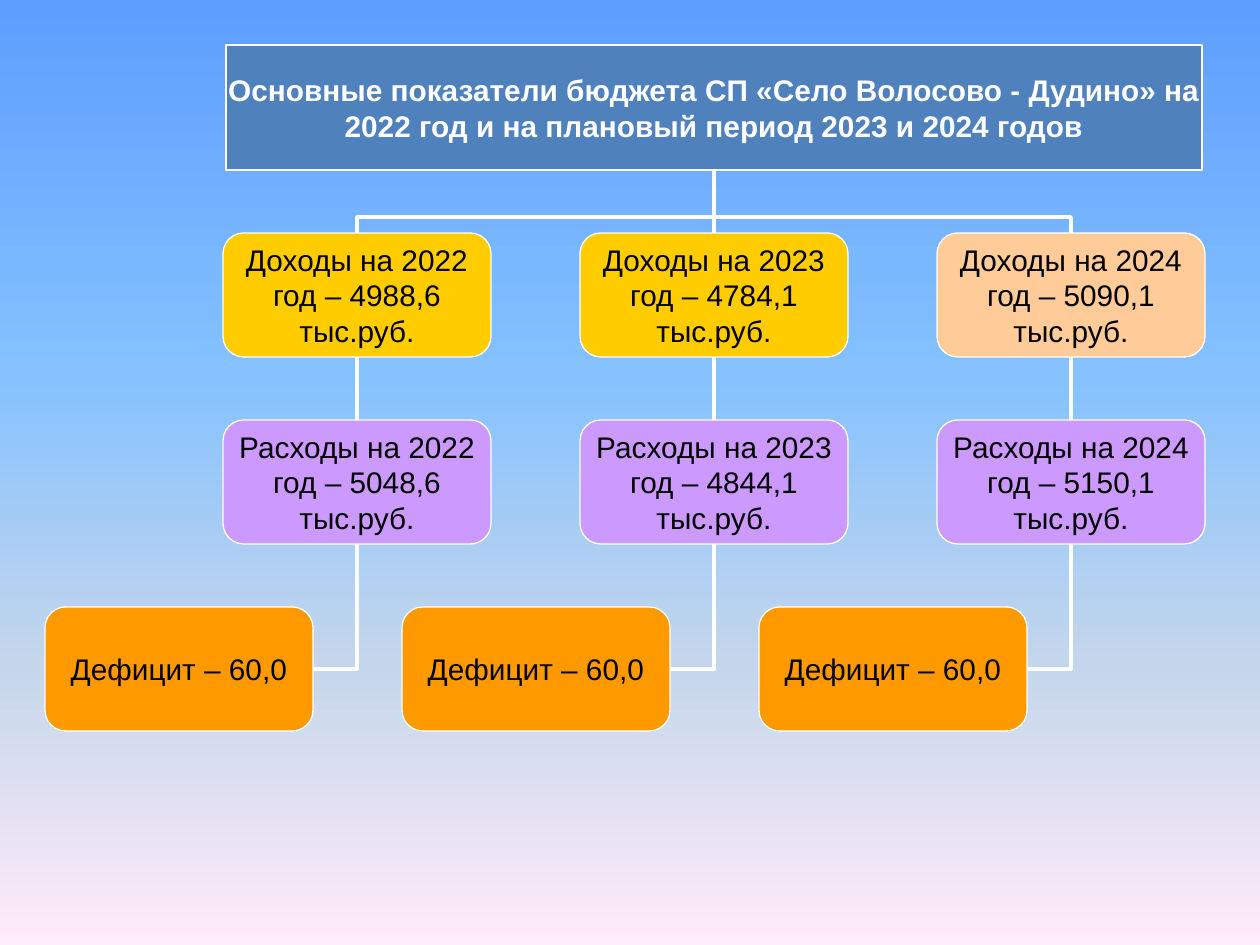
import dataclasses
import typing

import pptx
import pptx.dml.color
import pptx.enum.dml
import pptx.enum.shapes
import pptx.enum.text
import pptx.oxml
import pptx.oxml.ns
import pptx.util

WIDE, HIGH = 1260, 945
SCALE = 914400 / 126
FONT, SIZE = "Arial", 17
BOX_W, BOX_H = 268, 124
LEFT, TOP = 223, 233
STEP_X, STEP_Y = 357, 187
SHIFT = 178  # how far a deficit box sits left of its column
BEND = 25400  # share of the way to the trunk's turn, in 1/100000
ROUND = 0.167
TOP_SIDE, BOTTOM_SIDE, RIGHT_SIDE = 0, 2, 3

HUES = {
    "white": "FFFFFF", "black": "000000", "root": "4F81BD",
    "gold": "FFCC00", "peach": "FFCC99", "lilac": "CC99FF", "orange": "FF9900",
}
SKY = {0: "5E9EFF", 40: "85C2FF", 70: "C4D6EB", 100: "FFEBFA"}
TITLE = ("Основные показатели бюджета СП «Село Волосово - Дудино» "
         "на 2022 год и на плановый период 2023 и 2024 годов")


@dataclasses.dataclass(frozen=True)
class Year:
    name: int
    income: str
    spend: str
    gap: str
    hue: str


YEARS = [
    Year(2022, "4988,6", "5048,6", "60,0", "gold"),
    Year(2023, "4784,1", "4844,1", "60,0", "gold"),
    Year(2024, "5090,1", "5150,1", "60,0", "peach"),
]


def emu(px: float) -> pptx.util.Emu:
    return pptx.util.Emu(round(px * SCALE))


def rgb(hue: str) -> pptx.dml.color.RGBColor:
    return pptx.dml.color.RGBColor.from_string(HUES[hue])


def node(tag: str, **attrs: typing.Any) -> typing.Any:
    item = pptx.oxml.parse_xml(f"<{tag} {pptx.oxml.ns.nsdecls('a')}/>")
    for key, value in attrs.items():
        item.set(key, str(value))
    return item


def write(shape: typing.Any, text: str, *, hue: str = "black", bold: bool = False) -> None:
    frame = shape.text_frame
    frame.text = text
    frame.word_wrap = True
    frame.auto_size = pptx.enum.text.MSO_AUTO_SIZE.NONE
    frame.vertical_anchor = pptx.enum.text.MSO_ANCHOR.MIDDLE
    frame.margin_left = frame.margin_right = frame.margin_top = frame.margin_bottom = 0
    line = frame.paragraphs[0]
    line.alignment = pptx.enum.text.PP_ALIGN.CENTER
    font = line.runs[0].font
    font.name, font.size, font.bold = FONT, pptx.util.Pt(SIZE), bold
    font.color.rgb = rgb(hue)


def paint(shape: typing.Any, hue: str) -> None:
    shape.fill.solid()
    shape.fill.fore_color.rgb = rgb(hue)
    shape.line.color.rgb = rgb("white")
    shape.line.width = pptx.util.Pt(0.75)


def box(slide: typing.Any, col: int, row: int, text: str, hue: str, shift: int = 0) -> typing.Any:
    shape = slide.shapes.add_shape(
        pptx.enum.shapes.MSO_SHAPE.ROUNDED_RECTANGLE,
        emu(LEFT + col * STEP_X - shift), emu(TOP + row * STEP_Y), emu(BOX_W), emu(BOX_H))
    shape.adjustments[0] = ROUND
    shape.shadow.inherit = False
    paint(shape, hue)
    write(shape, text)
    return shape


def head(slide: typing.Any) -> typing.Any:
    """Turn the title placeholder into the rounded root box."""
    shape = slide.shapes.title
    shape.left, shape.top, shape.width, shape.height = map(emu, (226, 45, 976, 125))
    geom = node("a:prstGeom", prst="roundRect")
    guides = node("a:avLst")
    guides.append(node("a:gd", name="adj", fmla=f"val {round(ROUND * 100000)}"))
    geom.append(guides)
    shape._element.spPr.append(geom)
    paint(shape, "root")
    write(shape, TITLE, hue="white", bold=True)
    return shape


def link(slide: typing.Any, start: typing.Any, out: int, end: typing.Any, into: int,
         kind: str = "line") -> typing.Any:
    types = pptx.enum.shapes.MSO_CONNECTOR
    straight = kind == "line"
    wire = slide.shapes.add_connector(types.STRAIGHT if straight else types.ELBOW, 0, 0, 0, 0)
    wire.begin_connect(start, out)
    wire.end_connect(end, into)
    wire.line.color.rgb = rgb("white")
    wire.line.width = pptx.util.Pt(2.25)
    props = wire._element.spPr
    props.append(node("a:effectLst"))
    if not straight:
        props.find(pptx.oxml.ns.qn("a:prstGeom")).set("prst", kind)
    return wire


def trunk(slide: typing.Any, child: typing.Any, root: typing.Any) -> None:
    """Join a child's top to the root's bottom by a line that leaves upwards."""
    wire = link(slide, child, TOP_SIDE, root, BOTTOM_SIDE, "bentConnector3")
    right = wire.begin_x > wire.end_x
    left, top, wide, high = wire.left, wire.top, wire.width, wire.height
    props = wire._element.spPr
    frame = props.find(pptx.oxml.ns.qn("a:xfrm"))
    for key in ("flipH", "flipV"):
        frame.attrib.pop(key, None)
    frame.set("rot", str((90 if right else 270) * 60000))
    if right:
        frame.set("flipH", "1")
    wire.left, wire.top = left + (wide - high) // 2, top + (high - wide) // 2
    wire.width, wire.height = high, wide
    guides = props.find(".//" + pptx.oxml.ns.qn("a:avLst"))
    guides.append(node("a:gd", name="adj1", fmla=f"val {BEND}"))


def shade(slide: typing.Any) -> None:
    fill = slide.background.fill
    fill.gradient()
    fill.gradient_angle = 270
    stops = slide._element.find(".//" + pptx.oxml.ns.qn("a:gsLst"))
    for old in list(stops):
        stops.remove(old)
    for place, hue in SKY.items():
        stop = node("a:gs", pos=place * 1000)
        stop.append(node("a:srgbClr", val=hue))
        stops.append(stop)


def main() -> None:
    deck = pptx.Presentation()
    deck.slide_width, deck.slide_height = emu(WIDE), emu(HIGH)
    slide = deck.slides.add_slide(deck.slide_layouts[5])
    shade(slide)
    root = head(slide)
    for col, year in enumerate(YEARS):
        income = box(slide, col, 0, f"Доходы на {year.name} год – {year.income} тыс.руб.", year.hue)
        spend = box(slide, col, 1, f"Расходы на {year.name} год – {year.spend} тыс.руб.", "lilac")
        gap = box(slide, col, 2, f"Дефицит – {year.gap}", "orange", SHIFT)
        if col == len(YEARS) // 2:
            link(slide, income, TOP_SIDE, root, BOTTOM_SIDE)
        else:
            trunk(slide, income, root)
        link(slide, spend, TOP_SIDE, income, BOTTOM_SIDE)
        link(slide, gap, RIGHT_SIDE, spend, BOTTOM_SIDE, "bentConnector2")
    deck.save("out.pptx")


if __name__ == "__main__":
    main()
